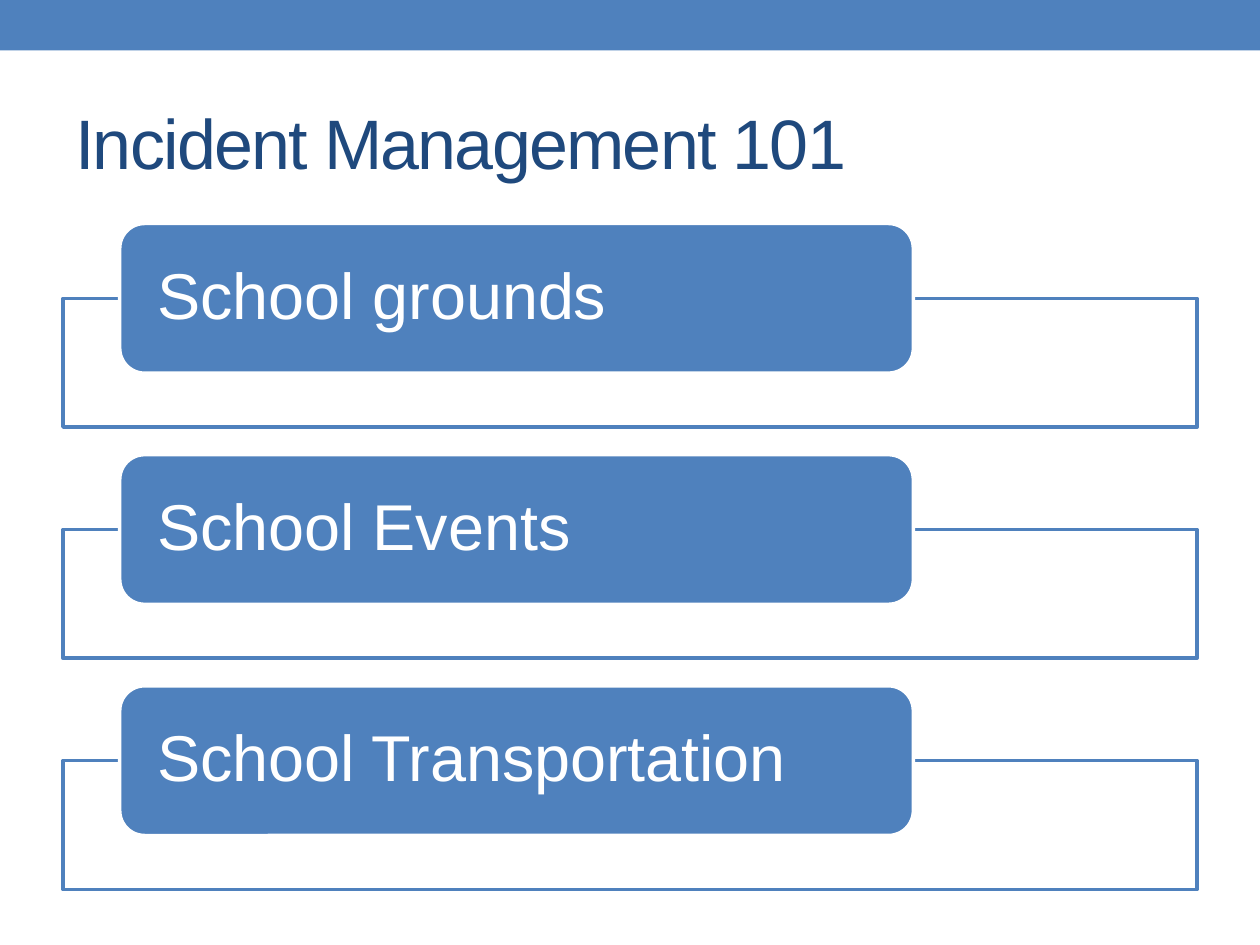
from lxml import etree
from pptx import Presentation
from pptx import util as u
from pptx.dml.color import RGBColor
from pptx.enum import shapes, text
from pptx.oxml.ns import qn

Pt = u.Pt
BLUE, NAVY, WHITE = "4F81BD", "1F497D", "FFFFFF"


def paint(fmt, hue):
    fmt.solid()
    fmt.fore_color.rgb = RGBColor.from_string(hue)


def write(shape, words, size, hue, inset):
    frame = shape.text_frame
    look = {"word_wrap": True, "vertical_anchor": text.MSO_ANCHOR.MIDDLE,
            "margin_left": Pt(inset), "margin_right": Pt(inset),
            "margin_top": 0, "margin_bottom": 0}
    for key, val in look.items():
        setattr(frame, key, val)
    para = frame.paragraphs[0]
    para.alignment = text.PP_ALIGN.LEFT
    run = para.add_run()
    run.text = words
    for key, val in {"name": "Arial", "size": Pt(size)}.items():
        setattr(run.font, key, val)
    paint(run.font.fill, hue)
    return para


deck = Presentation()
deck.slide_width, deck.slide_height = Pt(720), Pt(540)
slide = deck.slides.add_slide(deck.slide_layouts[6])
add = slide.shapes.add_shape
kind = shapes.MSO_SHAPE

# Top band
band = add(kind.RECTANGLE, 0, 0, Pt(720), Pt(28.8))
band.shadow.inherit = False
paint(band.fill, BLUE)
band.line.fill.background()

# Title, set slightly tight
title = slide.shapes.add_textbox(Pt(36), Pt(42), Pt(648), Pt(78))
para = write(title, "Incident Management 101", 40, NAVY, 7.2)
para.runs[0].font._element.set("spc", "-100")

# Three topics: an outlined frame with a label across its top edge
topics = ["School grounds", "School Events", "School Transportation"]
for row, topic in enumerate(topics):
    top = 127.7 + row * 132.1
    frame = add(kind.RECTANGLE, Pt(36), Pt(top + 42.8), Pt(648), Pt(73.6))
    label = add(kind.ROUNDED_RECTANGLE, Pt(68.4), Pt(top), Pt(453.6), Pt(85.6))
    for shape, fill, edge in [(frame, WHITE, BLUE), (label, BLUE, WHITE)]:
        shape.shadow.inherit = False
        paint(shape.fill, fill)
        paint(shape.line.fill, edge)
        shape.line.width = Pt(2.08)
    # Frame fill is 90% opaque
    tint = frame.fill._xPr.find(qn("a:solidFill"))[0]
    etree.SubElement(tint, qn("a:alpha"), val="90000")
    write(label, topic, 37, WHITE, 17.28).line_spacing = 0.9

deck.save("out.pptx")
